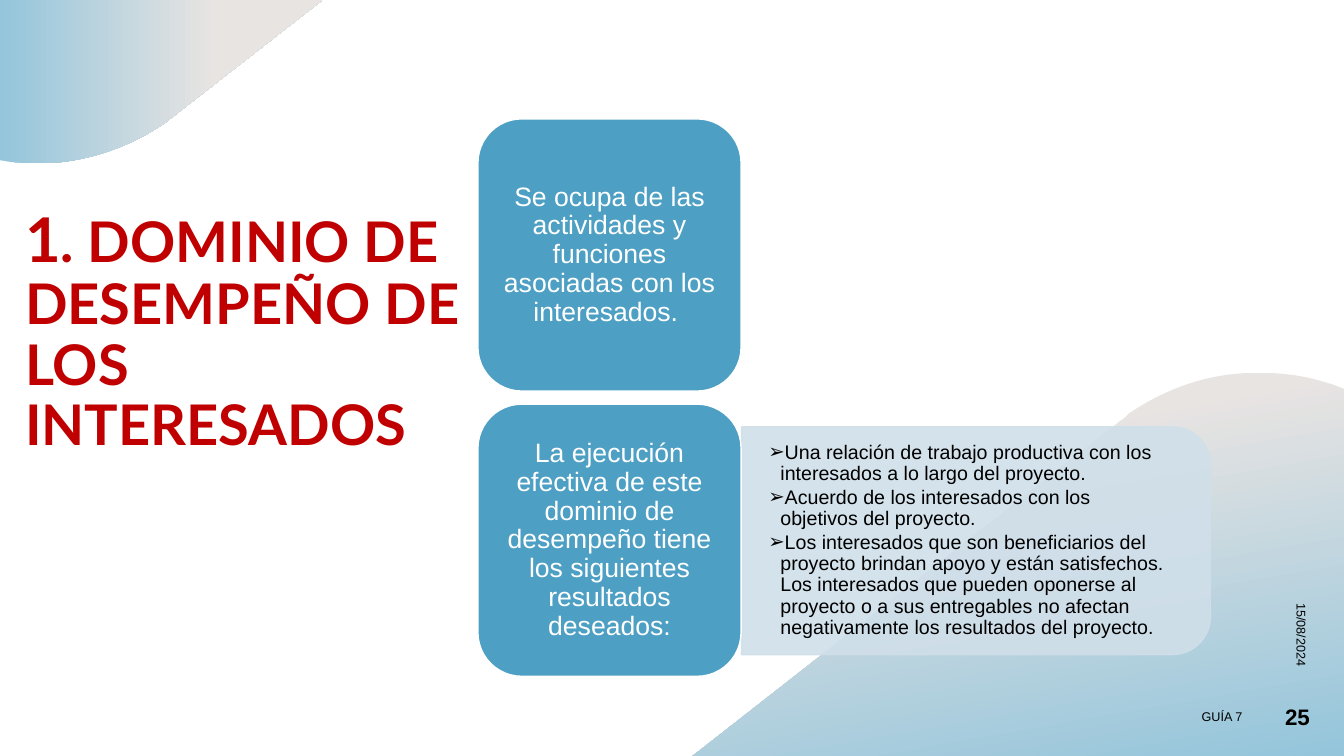
"""Build the stakeholder performance domain slide."""
from dataclasses import dataclass

from lxml.etree import SubElement
from pptx import Presentation
from pptx.dml.color import RGBColor as Rgb
from pptx.enum.shapes import MSO_SHAPE as Geo
from pptx.enum.text import MSO_ANCHOR as Anchor, MSO_AUTO_SIZE as Fit, PP_ALIGN as Align
from pptx.oxml.ns import qn
from pptx.shapes.base import BaseShape
from pptx.slide import Slide
from pptx.text.text import TextFrame, _Paragraph as Para
from pptx.util import Pt

PX = 9144
HUES = {
    "sky": "94C5DB", "sand": "E8E4E2", "card": "4D9FC3", "panel": "D0DFE9",
    "title": "C00000", "white": "FFFFFF", "black": "000000",
}
Point = tuple[float, float]


@dataclass
class Wave:
    start: Point
    steps: list[tuple[int, ...]]
    stops: list[tuple[str, float]]
    angle: int


@dataclass
class Card:
    top: int
    text: str


@dataclass
class Label:
    box: tuple[int, int, int, int]
    text: str
    size: int
    bold: bool = False
    turn: int = 0


WAVES = [
    Wave((1253, 370),
         [(1277, 370, 1300, 374, 1323, 382), (1333, 386), (1333, 750), (687, 750),
          (1116, 414), (1120, 410), (1157, 385, 1198, 371, 1240, 370),
          (1244, 370, 1248, 369, 1253, 370)],
         [("sand", 0.23), ("sky", 1)], 280),
    Wave((0, 0),
         [(320, 0), (170, 117), (165, 121), (129, 146, 88, 160, 46, 162),
          (42, 162, 37, 162, 33, 162), (27, 162, 21, 161, 15, 161), (0, 159)],
         [("sky", 0), ("sand", 0.67)], 0),
]
CARDS = [
    Card(118, "Se ocupa de las actividades y funciones asociadas con los interesados. "),
    Card(401, "La ejecución efectiva de este dominio de desempeño tiene los "
              "siguientes resultados deseados:"),
]
RESULTS = [
    "Una relación de trabajo productiva con los interesados a lo largo del proyecto.",
    "Acuerdo de los interesados con los objetivos del proyecto.",
    "Los interesados que son beneficiarios del proyecto brindan apoyo y están "
    "satisfechos. Los interesados que pueden oponerse al proyecto o a sus "
    "entregables no afectan negativamente los resultados del proyecto.",
]
LABELS = [
    Label((1146, 506, 290, 40), "15/08/2024", 9, turn=90),
    Label((942, 691, 300, 40), "GUÍA 7", 9),
    Label((1242, 691, 67, 40), "25", 16, bold=True),
]


def hue(name: str) -> Rgb:
    """Return the named colour."""
    return Rgb.from_string(HUES[name])


def place(shape: BaseShape, *box: int) -> None:
    """Move and size a shape in px."""
    shape.left, shape.top, shape.width, shape.height = (v * PX for v in box)


def setup(frame: TextFrame, anchor: Anchor, *pads: int) -> None:
    """Set wrapping, anchor and the left, top, right and bottom insets."""
    frame.word_wrap, frame.auto_size = True, Fit.NONE
    frame.vertical_anchor = anchor
    (frame.margin_left, frame.margin_top,
     frame.margin_right, frame.margin_bottom) = (p * PX for p in pads)


def style(para: Para, face: str, size: int, color: str, align: Align,
          bold: bool = False, after: int = 0, line: float = 1.0) -> None:
    """Set font and spacing of a paragraph."""
    para.alignment, para.line_spacing = align, line
    para.space_before, para.space_after = Pt(0), Pt(after)
    font = para.font
    font.name, font.size, font.bold = face, Pt(size), bold
    font.color.rgb = hue(color)


def curve(a: Point, step: tuple[int, ...], count: int = 16) -> list[Point]:
    """Return the points of a line or a cubic curve from a."""
    if len(step) == 2:
        return [step]
    b, c, d = step[:2], step[2:4], step[4:]
    spots = []
    for i in range(1, count + 1):
        t = i / count
        u = 1 - t
        spots.append(tuple(u**3 * a[k] + 3 * u * u * t * b[k]
                           + 3 * u * t * t * c[k] + t**3 * d[k] for k in (0, 1)))
    return spots


def add_wave(slide: Slide, wave: Wave) -> None:
    """Draw a gradient corner shape."""
    spots = [wave.start]
    for step in wave.steps:
        spots += curve(spots[-1], step)
    ends = [(round(x * PX), round(y * PX)) for x, y in spots]
    pen = slide.shapes.build_freeform(*ends[0], scale=1.0)
    pen.add_line_segments(ends[1:], close=True)
    shape = pen.convert_to_shape()
    shape.shadow.inherit = False
    shape.line.fill.background()
    shape.fill.gradient()
    shape.fill.gradient_angle = wave.angle
    for stop, (name, spot) in zip(shape.fill.gradient_stops, wave.stops):
        stop.color.rgb, stop.position = hue(name), spot


def add_block(slide: Slide, kind: Geo, box: tuple[int, ...],
              fill: str, edge: str) -> BaseShape:
    """Draw a filled preset shape."""
    shape = slide.shapes.add_shape(kind, *(v * PX for v in box))
    shape.shadow.inherit = False
    shape.fill.solid()
    shape.fill.fore_color.rgb = hue(fill)
    shape.line.color.rgb, shape.line.width = hue(edge), Pt(1)
    return shape


def add_card(slide: Slide, card: Card) -> None:
    """Draw a rounded card with its text."""
    shape = add_block(slide, Geo.ROUNDED_RECTANGLE, (474, card.top, 261, 270),
                      "card", "white")
    setup(shape.text_frame, Anchor.MIDDLE, 8, 4, 8, 4)
    para = shape.text_frame.paragraphs[0]
    para.text = card.text
    style(para, "Arial", 19, "white", Align.CENTER, after=7, line=0.9)


def add_panel(slide: Slide) -> None:
    """Draw the translucent panel behind the results."""
    shape = add_block(slide, Geo.ROUND_2_SAME_RECTANGLE, (855, 304, 226, 465),
                      "panel", "panel")
    shape.rotation = 90
    for color in shape._element.spPr.iter(qn("a:srgbClr")):
        SubElement(color, qn("a:alpha"), val="90000")


def add_list(slide: Slide) -> None:
    """Fill the body placeholder with the results."""
    body = slide.placeholders[1]
    place(body, 735, 434, 454, 204)
    slide.shapes._spTree.append(body._element)
    frame = body.text_frame
    setup(frame, Anchor.MIDDLE, 27, 14, 27, 14)
    frame.text = "\n".join(RESULTS)
    for para in frame.paragraphs:
        props = para._p.get_or_add_pPr()
        props.set("marL", str(12 * PX))
        props.set("indent", str(-12 * PX))
        SubElement(props, qn("a:buFont"), typeface="Arial")
        SubElement(props, qn("a:buChar"), char="➢")
        style(para, "Arial", 14, "black", Align.LEFT, after=2, line=0.9)


def add_title(slide: Slide) -> None:
    """Fill the title placeholder."""
    title = slide.shapes.title
    place(title, 15, 184, 459, 355)
    setup(title.text_frame, Anchor.BOTTOM, 10, 5, 10, 85)
    para = title.text_frame.paragraphs[0]
    digit = para.add_run()
    digit.text, digit.font.size = "1", Pt(44)
    para.add_run().text = ". DOMINIO DE DESEMPEÑO DE LOS INTERESADOS"
    style(para, "Lato", 40, "title", Align.LEFT, bold=True, line=0.9)


def add_label(slide: Slide, label: Label) -> None:
    """Write a small right-aligned label."""
    box = slide.shapes.add_textbox(*(v * PX for v in label.box))
    box.rotation = label.turn
    setup(box.text_frame, Anchor.MIDDLE, 10, 5, 10, 5)
    para = box.text_frame.paragraphs[0]
    para.text = label.text
    style(para, "Arial", label.size, "black", Align.RIGHT, bold=label.bold)


def main() -> None:
    """Build and save the slide."""
    deck = Presentation()
    deck.slide_width, deck.slide_height = 1333 * PX, 750 * PX
    slide = deck.slides.add_slide(deck.slide_layouts[1])
    for wave in WAVES:
        add_wave(slide, wave)
    add_title(slide)
    add_panel(slide)
    for card in CARDS:
        add_card(slide, card)
    add_list(slide)
    for label in LABELS:
        add_label(slide, label)
    deck.save("out.pptx")


if __name__ == "__main__":
    main()
